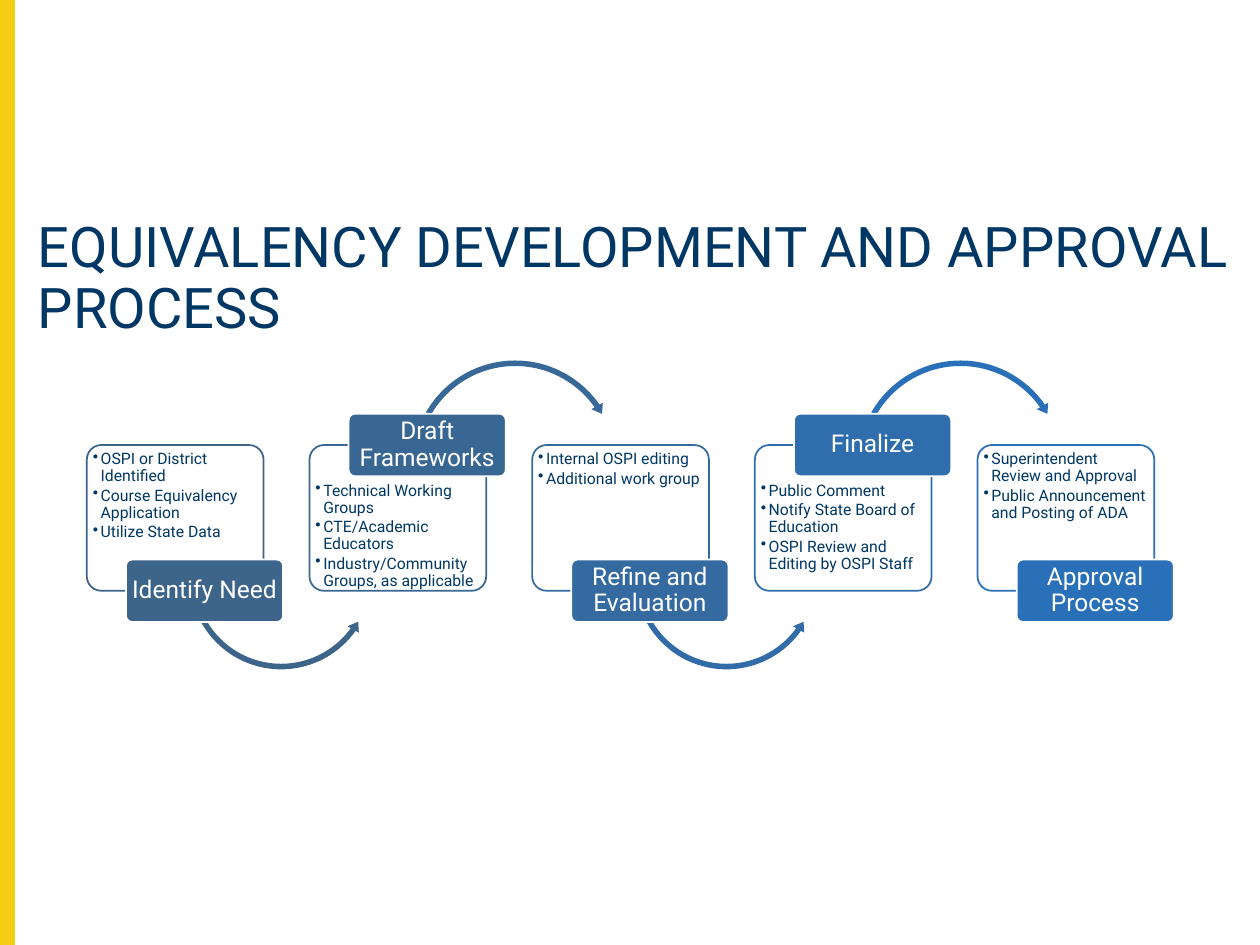
from lxml.etree import SubElement
from pptx import Presentation
from pptx.dml.color import RGBColor
from pptx.enum.shapes import MSO_SHAPE
from pptx.enum.text import MSO_ANCHOR, MSO_AUTO_SIZE, PP_ALIGN
from pptx.oxml.ns import qn
from pptx.util import Pt

FONT, NAVY, WHITE, GOLD = "Roboto", "003764", "FFFFFF", "F4CE12"
STEPS = [
    ("Identify Need", "3D6489", "3D6489",
     ["OSPI or District Identified", "Course Equivalency Application", "Utilize State Data"]),
    ("Draft Frameworks", "396794", "376898",
     ["Technical Working Groups", "CTE/Academic Educators",
      "Industry/Community Groups, as applicable"]),
    ("Refine and Evaluation", "346AA0", "316CA8",
     ["Internal OSPI editing", "Additional work group"]),
    ("Finalize", "2F6DAC", "2A70B8",
     ["Public Comment", "Notify State Board of Education",
      "OSPI Review and Editing by OSPI Staff"]),
    ("Approval Process", "2A70B8", None,
     ["Superintendent Review and Approval", "Public Announcement and Posting of ADA"]),
]


def paint(target, color):
    target.solid()
    target.fore_color.rgb = RGBColor.from_string(color)


def draw(slide, kind, box, fill, line=None, adjust=()):
    shape = slide.shapes.add_shape(kind, *(Pt(v) for v in box))
    shape.shadow.inherit = False
    paint(shape.fill, fill)
    if line:
        paint(shape.line.fill, line)
        shape.line.width = Pt(1)
    else:
        shape.line.fill.background()
    for i, value in enumerate(adjust):
        shape.adjustments[i] = value
    return shape


def setup(shape, anchor, margins):
    frame = shape.text_frame
    frame.word_wrap = True
    frame.auto_size = MSO_AUTO_SIZE.NONE
    frame.vertical_anchor = anchor
    (frame.margin_left, frame.margin_top,
     frame.margin_right, frame.margin_bottom) = (Pt(v) for v in margins)
    return frame


def write(para, text, size, color, align=PP_ALIGN.LEFT):
    para.alignment = align
    para.line_spacing = 0.9
    run = para.add_run()
    run.text = text
    run.font.name = FONT
    run.font.size = Pt(size)
    run.font.color.rgb = RGBColor.from_string(color)


def bullet(para):
    props = para._p.get_or_add_pPr()
    props.set("marL", str(Pt(4.5)))
    props.set("indent", str(Pt(-4.5)))
    SubElement(props, qn("a:buChar")).set("char", "•")


def heading(slide, box):
    title = slide.shapes.title
    title.left, title.top, title.width, title.height = (Pt(v) for v in box)
    frame = setup(title, MSO_ANCHOR.MIDDLE, (7.2, 3.6, 7.2, 3.6))
    write(frame.paragraphs[0], "EQUIVALENCY DEVELOPMENT AND APPROVAL PROCESS", 32, NAVY)


def card(slide, box, items, color, raised):
    shape = draw(slide, MSO_SHAPE.ROUNDED_RECTANGLE, box, WHITE, color, [0.1])
    fill = shape.fill._xPr.find(qn("a:solidFill"))
    SubElement(fill[0], qn("a:alpha")).set("val", "90000")
    frame = setup(shape, MSO_ANCHOR.TOP, (1, 19 if raised else 1, 0, 0))
    for i, item in enumerate(items):
        para = frame.add_paragraph() if i else frame.paragraphs[0]
        para.level = 1
        bullet(para)
        para.space_after = Pt(1.35)
        write(para, item, 9, NAVY)


def arc(slide, x, y, color, raised):
    if raised:
        draw(slide, MSO_SHAPE.CIRCULAR_ARROW, (x + 56.7, y - 50.5, 121.7, 121.7), color,
             adjust=[0.026, 3.181, 195.064, 125.755, 0.031])
    else:
        draw(slide, MSO_SHAPE.LEFT_CIRCULAR_ARROW, (x + 56.7, y + 21.6, 108.7, 108.7), color,
             adjust=[0.029, 3.584, 21.339, 90.245, 0.034])


def label(slide, box, text, color):
    shape = draw(slide, MSO_SHAPE.ROUNDED_RECTANGLE, box, color, WHITE, [0.1])
    frame = setup(shape, MSO_ANCHOR.MIDDLE, (2, 1.4, 2, 1.4))
    write(frame.paragraphs[0], text, 14, WHITE, PP_ALIGN.CENTER)


def flow(slide, box):
    left, top, width, height = box
    wide, tall = 101, 35.7
    pitch = (width - wide) / (len(STEPS) - 1)
    for i, (name, color, tint, items) in enumerate(STEPS):
        x, raised = left + i * pitch, i % 2 == 1
        card(slide, (x, top, wide, height), items, color, raised)
        if tint:
            arc(slide, x, top, tint, raised)
        mid = top if raised else top + height
        label(slide, (x + 22.4, mid - tall / 2, 89.8, tall), name, color)


def main():
    deck = Presentation()
    deck.slide_width, deck.slide_height = Pt(720), Pt(540)
    slide = deck.slides.add_slide(deck.slide_layouts[5])
    draw(slide, MSO_SHAPE.RECTANGLE, (0, 0, 8, 540), GOLD, GOLD)
    heading(slide, (14.4, 115.2, 701.3, 89.3))
    flow(slide, (49.6, 254.3, 610, 83.3))
    deck.save("out.pptx")


if __name__ == "__main__":
    main()
